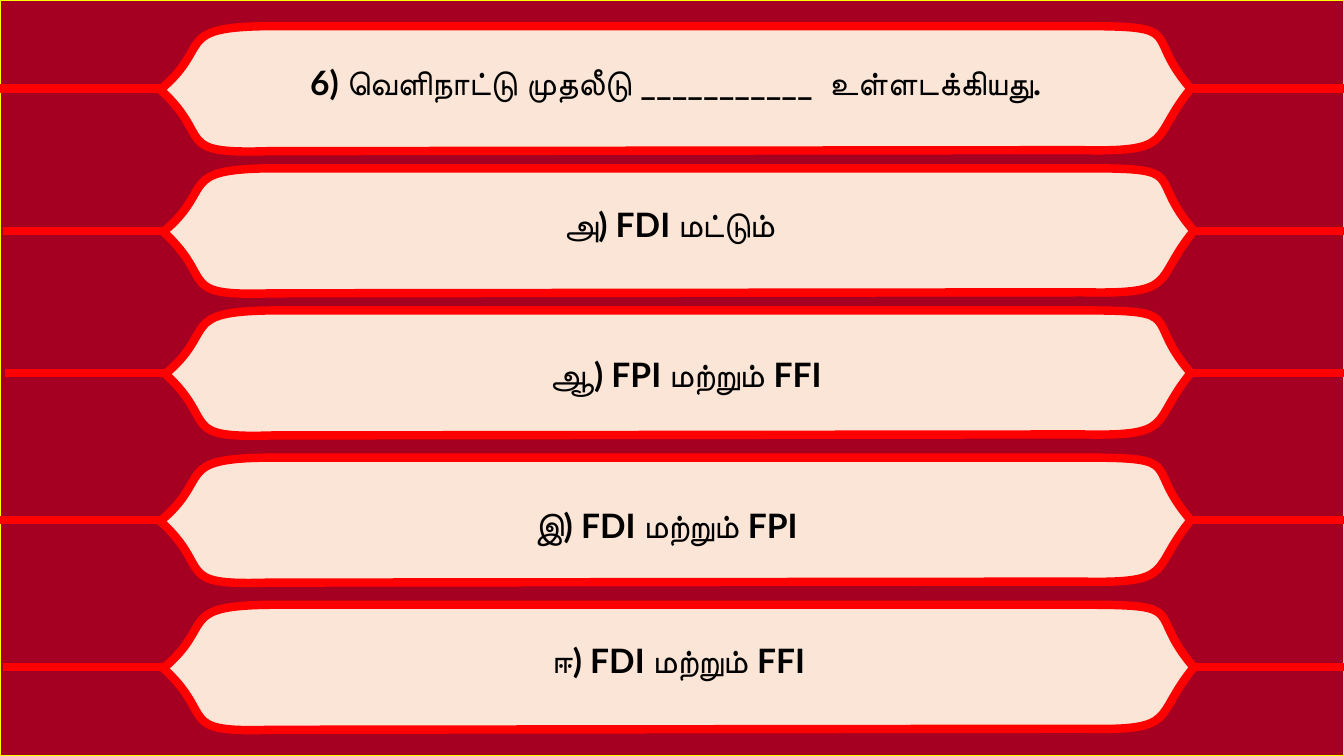
from dataclasses import dataclass

from lxml.etree import SubElement
from pptx import Presentation
from pptx.dml.color import RGBColor
from pptx.enum.shapes import MSO_CONNECTOR as Connector, MSO_SHAPE as Shape
from pptx.enum.text import MSO_ANCHOR as Anchor, MSO_AUTO_SIZE as AutoSize, PP_ALIGN as Align
from pptx.oxml.ns import qn
from pptx.util import Inches, Pt


@dataclass(frozen=True)
class Theme:
    """Colours, font and sizes of the quiz slide."""
    backdrop: str = "A50021"
    border: str = "FFFF00"
    bar: str = "FBE5D6"
    accent: str = "FF0000"
    ink: str = "000000"
    font: str = "Lato"
    text_size: float = 24
    border_width: float = 1
    accent_width: float = 6


SLIDE_WIDTH, SLIDE_HEIGHT = 13.33, 7.5
BAR_WIDTH, BAR_MARGIN, RAIL_DROP = 10.22, 1.59, 0.62
RAIL_OVERHANG = 1.52
BAR_START = (0, 0.63)
BAR_OUTLINE = [
    [(0.52, 0.2), (0.12, 0.01), (1.07, 0)],
    [(9.15, 0)],
    [(10.2, 0), (9.74, 0.07), (10.22, 0.62)],
    [(9.81, 1.12), (10.08, 1.25), (9.13, 1.23)],
    [(1.07, 1.24)],
    [(0.11, 1.27), (0.53, 1.11), BAR_START],
]


def rgb(value):
    """Turn a hex string into a colour."""
    return RGBColor.from_string(value)


def bend(outline, stretch):
    """Turn the straight segments of a bar outline into cubic curves."""
    sides = list(outline.element.iter(qn("a:lnTo")))
    for side, segment in zip(sides, BAR_OUTLINE):
        if len(segment) == 1:
            continue
        curve = SubElement(side.getparent(), qn("a:cubicBezTo"))
        for x, y in segment:
            SubElement(curve, qn("a:pt"), x=str(Inches(x * stretch)), y=str(Inches(y)))
        side.getparent().replace(side, curve)


def write(frame, text, *, theme, space_after=0, right=0.1, bottom=0.05):
    """Fill a text frame with one centred bold line."""
    frame.word_wrap = True
    frame.margin_right, frame.margin_bottom = Inches(right), Inches(bottom)
    line = frame.paragraphs[0]
    line.alignment, line.line_spacing = Align.CENTER, 1.5
    line.space_after = Pt(space_after)
    run = line.add_run()
    run.text = text
    run.font.name, run.font.size, run.font.bold = theme.font, Pt(theme.text_size), True
    run.font.color.rgb = rgb(theme.ink)


class QuizSlide:
    """Draws the elements of a quiz slide in one style."""

    def __init__(self, slide, theme):
        """Keep the slide and its style."""
        self.slide, self.theme = slide, theme

    def paint(self, shape, fill, outline, width):
        """Set the fill and outline of a shape and drop its shadow."""
        shape.shadow.inherit = False
        shape.fill.solid()
        shape.fill.fore_color.rgb = rgb(fill)
        shape.line.color.rgb = rgb(outline)
        shape.line.width = Pt(width)

    def backdrop(self):
        """Cover the slide with the bordered backdrop."""
        panel = self.slide.shapes.add_shape(
            Shape.RECTANGLE, 0, 0, Inches(SLIDE_WIDTH), Inches(SLIDE_HEIGHT))
        self.paint(panel, self.theme.backdrop, self.theme.border, self.theme.border_width)

    def rail(self, shapes, start, end, y):
        """Draw the horizontal line behind a bar."""
        rail = shapes.add_connector(
            Connector.STRAIGHT, Inches(start), Inches(y), Inches(end), Inches(y))
        rail.line.color.rgb = rgb(self.theme.accent)
        rail.line.width = Pt(self.theme.accent_width)
        SubElement(rail.element.spPr, qn("a:effectLst"))

    def bar(self, left, top, width=BAR_WIDTH):
        """Draw a pointed bar on its rail and return the bar."""
        shapes = self.slide.shapes.add_group_shape().shapes
        self.rail(shapes, left - BAR_MARGIN, left + width + RAIL_OVERHANG, top + RAIL_DROP)
        stretch = width / BAR_WIDTH
        corners = [(Inches(left + x * stretch), Inches(top + y))
                   for x, y in [BAR_START, *(segment[-1] for segment in BAR_OUTLINE)]]
        builder = shapes.build_freeform(*corners[0])
        builder.add_line_segments(corners[1:], close=True)
        bar = builder.convert_to_shape()
        bend(bar, stretch)
        self.paint(bar, self.theme.bar, self.theme.accent, self.theme.accent_width)
        return bar

    def bar_text(self, bar, text, right=0.1):
        """Write a line inside a bar, slightly above its middle."""
        bar.text_frame.vertical_anchor = Anchor.MIDDLE
        write(bar.text_frame, text, theme=self.theme, right=right, bottom=0.39)

    def label(self, text, left, top, width):
        """Place a line of text in its own box."""
        box = self.slide.shapes.add_textbox(
            Inches(left), Inches(top), Inches(width), Inches(0.66))
        write(box.text_frame, text, theme=self.theme, space_after=10)
        box.text_frame.auto_size = AutoSize.SHAPE_TO_FIT_TEXT


def main():
    """Build the quiz slide and save it."""
    deck = Presentation()
    deck.slide_width, deck.slide_height = Inches(SLIDE_WIDTH), Inches(SLIDE_HEIGHT)
    quiz = QuizSlide(deck.slides.add_slide(deck.slide_layouts[6]), Theme())
    quiz.backdrop()
    question = quiz.bar(1.59, 0.26)
    quiz.bar_text(question, "6) வெளிநாட்டு முதலீடு ___________  உள்ளடக்கியது.")
    option_a = quiz.bar(1.62, 1.67)
    quiz.bar_text(option_a, "அ) FDI மட்டும்", right=0.29)
    quiz.bar(1.64, 3.08, width=10.17)
    quiz.bar(1.59, 4.54)
    option_d = quiz.bar(1.62, 6)
    quiz.bar_text(option_d, "ஈ) FDI மற்றும் FFI")
    quiz.label("இ) FDI மற்றும் FPI", 2, 4.76, 9.21)
    quiz.label("ஆ) FPI மற்றும் FFI", 3.37, 3.26, 6.86)
    deck.save("out.pptx")


if __name__ == "__main__":
    main()
